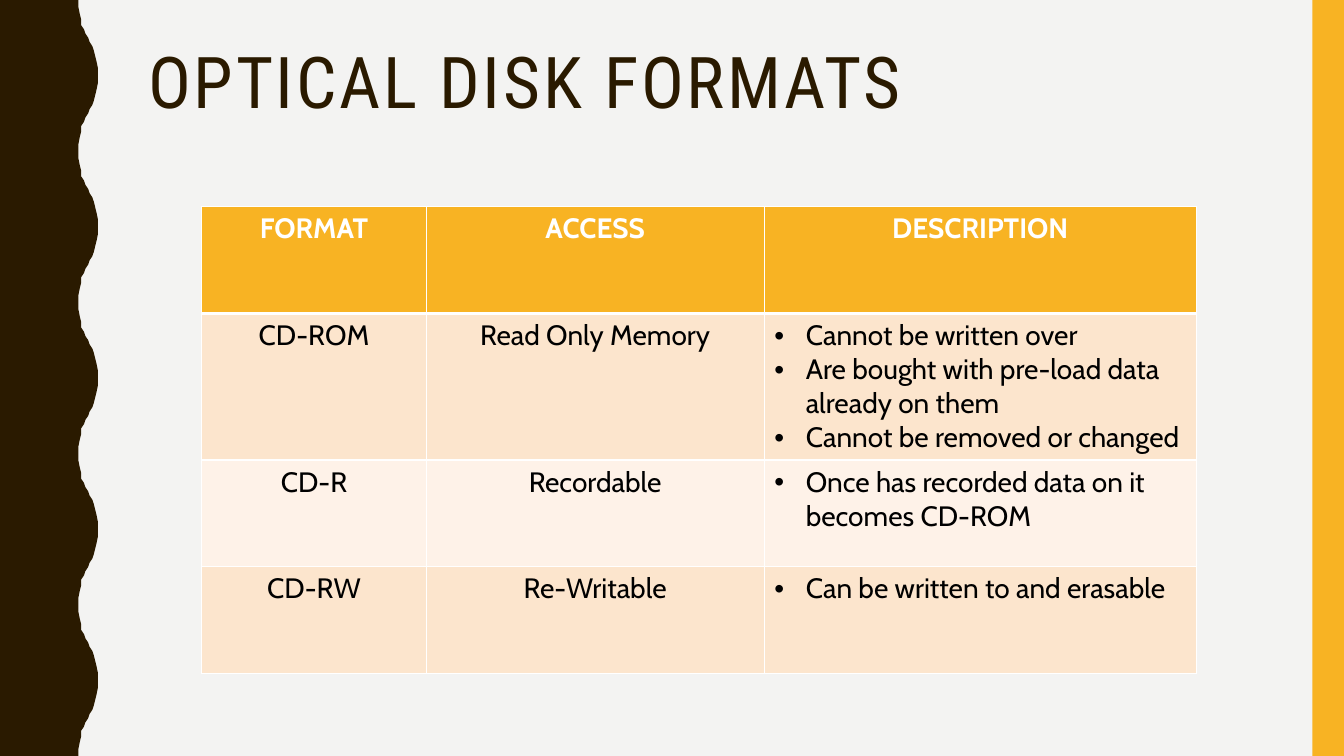
"""Build a slide with a table of optical disk formats."""
from lxml import etree
from pptx import Presentation
from pptx.dml.color import RGBColor
from pptx.enum.shapes import MSO_SHAPE
from pptx.enum.text import MSO_ANCHOR, MSO_AUTO_SIZE, PP_ALIGN
from pptx.oxml.ns import qn
from pptx.util import Pt

TITLE = "OPTICAL DISK FORMATS"
ROWS = [
    ("FORMAT", "ACCESS", "DESCRIPTION"),
    ("CD-ROM", "Read Only Memory", [
        "Cannot be written over",
        "Are bought with pre-load data already on them",
        "Cannot be removed or changed",
    ]),
    ("CD-R", "Recordable", ["Once has recorded data on it becomes CD-ROM"]),
    ("CD-RW", "Re-Writable", ["Can be written to and erasable"]),
]

BROWN = RGBColor(0x2A, 0x1A, 0x00)
AMBER = RGBColor(0xF8, 0xB3, 0x23)
PAPER = RGBColor(0xF3, 0xF3, 0xF2)
PEACH = RGBColor(0xFC, 0xE5, 0xCD)
CREAM = RGBColor(0xFE, 0xF2, 0xE8)
WHITE = RGBColor(0xFF, 0xFF, 0xFF)
BLACK = RGBColor(0x00, 0x00, 0x00)

RECTANGLE = MSO_SHAPE.RECTANGLE
LEFT, CENTER = PP_ALIGN.LEFT, PP_ALIGN.CENTER
TOP = MSO_ANCHOR.TOP
NO_AUTOFIT = MSO_AUTO_SIZE.NONE

PAGE_WIDTH, PAGE_HEIGHT = 960, 540
STRIPE_WIDTH = 22.5
WAVE_PERIOD, WAVE_COUNT = 108, 5
WAVE_RISE = [
    (56.2, 0), (56.2, 5), (56.9, 10), (57.6, 14.4), (58.3, 18),
    (59.8, 21), (61.2, 24), (62.6, 27), (64.1, 30), (65.5, 33),
    (67, 36), (68.4, 39.6), (69.1, 44), (69.8, 49), (69.8, 54),
]
TABLE_LEFT, TABLE_TOP = 144.2, 147.6
COLUMN_WIDTHS = [160.2, 241.5, 308.7]
ROW_HEIGHT = 76.3
BULLET_INDENT = 22.5


def paint(shape, color):
    """Give a shape a flat fill without line or shadow."""
    shape.fill.solid()
    shape.fill.fore_color.rgb = color
    shape.line.fill.background()
    shape.shadow.inherit = False


def add_wave(page):
    """Draw the wavy band down the left edge."""
    wave = WAVE_RISE + [(x, WAVE_PERIOD - y) for x, y in WAVE_RISE[-2::-1]]
    edge = [(x, y + WAVE_PERIOD * turn)
            for turn in range(WAVE_COUNT) for x, y in wave]
    builder = page.shapes.build_freeform(0, 0, scale=Pt(1))
    builder.add_line_segments(edge + [(0, PAGE_HEIGHT)], close=True)
    paint(builder.convert_to_shape(), BROWN)


def add_title(page):
    """Fill and place the title placeholder."""
    title = page.shapes.title
    title.left, title.top = Pt(98.6), Pt(30.2)
    title.width, title.height = Pt(801.4), Pt(117.4)
    frame = title.text_frame
    frame.text = TITLE
    frame.vertical_anchor = TOP
    frame.auto_size = NO_AUTOFIT
    para = frame.paragraphs[0]
    para.alignment = LEFT
    para.line_spacing = 0.9
    para.font.name = "Roboto Condensed"
    para.font.size = Pt(51)
    para.font.color.rgb = BROWN
    para.runs[0].font._element.set("spc", "200")


def add_borders(cell, row):
    """Outline a cell in white, thicker below the header."""
    properties = cell._tc.get_or_add_tcPr()
    widths = {"L": 1, "R": 1, "T": 3 if row == 1 else 1, "B": 3 if row == 0 else 1}
    for side, width in widths.items():
        line = etree.SubElement(properties, qn(f"a:ln{side}"), w=str(Pt(width)))
        fill = etree.SubElement(line, qn("a:solidFill"))
        etree.SubElement(fill, qn("a:srgbClr"), val=str(WHITE))


def add_bullet(para):
    """Give a paragraph a hanging round bullet."""
    properties = para._p.get_or_add_pPr()
    properties.set("marL", str(Pt(BULLET_INDENT)))
    properties.set("indent", str(-Pt(BULLET_INDENT)))
    font = etree.SubElement(properties, qn("a:buFont"), typeface="Arial")
    font.addnext(etree.Element(qn("a:buChar"), char="•"))


def fill_cell(cell, content, row):
    """Write and style one table cell."""
    bulleted = isinstance(content, list)
    cell.text = "\n".join(content) if bulleted else content
    add_borders(cell, row)
    cell.fill.solid()
    cell.fill.fore_color.rgb = AMBER if row == 0 else PEACH if row % 2 else CREAM
    for para in cell.text_frame.paragraphs:
        para.alignment = LEFT if bulleted else CENTER
        if bulleted:
            add_bullet(para)
        para.font.name = "Cabin"
        para.font.size = Pt(20)
        para.font.bold = row == 0
        para.font.color.rgb = WHITE if row == 0 else BLACK


def add_formats_table(page):
    """Lay out the table of disk formats."""
    table = page.shapes.add_table(
        len(ROWS), len(COLUMN_WIDTHS), Pt(TABLE_LEFT), Pt(TABLE_TOP),
        Pt(sum(COLUMN_WIDTHS)), Pt(ROW_HEIGHT * len(ROWS))).table
    for column, width in zip(table.columns, COLUMN_WIDTHS):
        column.width = Pt(width)
    for row, contents in enumerate(ROWS):
        table.rows[row].height = Pt(ROW_HEIGHT)
        for column, content in enumerate(contents):
            fill_cell(table.cell(row, column), content, row)


def main():
    """Assemble and save the deck."""
    deck = Presentation()
    deck.slide_width, deck.slide_height = Pt(PAGE_WIDTH), Pt(PAGE_HEIGHT)
    page = deck.slides.add_slide(deck.slide_layouts.get_by_name("Title Only"))
    page.background.fill.solid()
    page.background.fill.fore_color.rgb = PAPER
    add_wave(page)
    stripe = page.shapes.add_shape(
        RECTANGLE, Pt(PAGE_WIDTH - STRIPE_WIDTH), 0, Pt(STRIPE_WIDTH), Pt(PAGE_HEIGHT))
    paint(stripe, AMBER)
    add_title(page)
    add_formats_table(page)
    deck.save("out.pptx")


if __name__ == "__main__":
    main()
